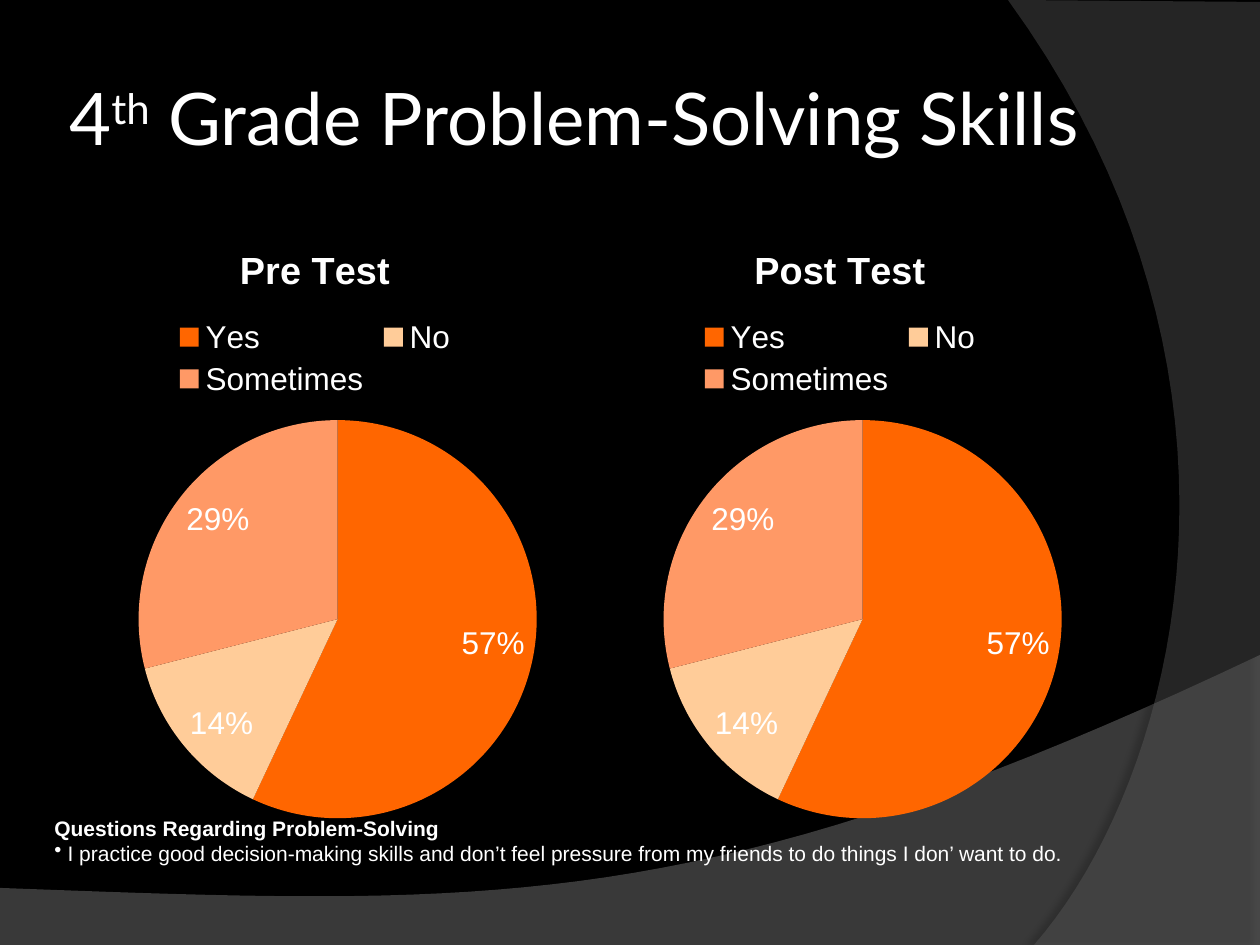
"""Build the slide comparing pre and post test problem-solving answers."""
from lxml import etree
from pptx import Presentation, util as u
from pptx.chart import data as cd
from pptx.dml import color as dc
from pptx.enum import chart as ce, text as te
from pptx.oxml import ns

THEME = {
    "back": "000000", "ink": "FFFFFF", "shade": "000000",
    "slices": ["FF6600", "FFCC99", "FF9966"],
    "body": "Arial", "head": "Lato",
    "title": 41.4, "name": 21.6, "chart": 18, "note": 12,
}
TITLE = [("4", 0), ("th", 30), (" Grade Problem-Solving Skills", 0)]
CATS = ["Yes", "No", "Sometimes"]
TESTS = {"Pre Test": [57, 14, 29], "Post Test": [57, 14, 29]}
NOTES = [
    ("Questions Regarding Problem-Solving", True),
    (" I practice good decision-making skills and don’t feel pressure "
     "from my friends to do things I don’ want to do.", False),
]
WAVES = [
    {"start": (1260, 655), "curve": [(704, 919), (493, 906), (0, 888)],
     "rest": [(0, 946), (1260, 946)], "fill": "7F7F7F", "alpha": 45,
     "shadow": (35, 4, 3.5, 270)},
    {"start": (1034, 945), "curve": [(1178, 780), (1283, 378), (1008, 0)],
     "rest": [(1260, 2), (1260, 945)], "fill": "5E5E5E", "alpha": 40,
     "shadow": (45, 4, 4, 180)},
]
TITLE_BOX = (63, 38, 1029, 158)
NOTE_BOX = (42, 809, 1081, 89)
CHART_BOX = (63, 220, 504, 624)
CHART_STEP = 525
PIE = {"x": 0.15, "y": 0.32, "w": 0.79, "h": 0.64}
SCALE = 914400 / 126
STEPS = 40


def emu(*nums):
    return [round(n * SCALE) for n in nums]


def rgb(code):
    return dc.RGBColor.from_string(code)


def sub(node, tag, **attrs):
    child = etree.SubElement(node, ns.qn(tag))
    for key, val in attrs.items():
        child.set(key, str(val))
    return child


def style(font, size, face=THEME["body"], bold=False):
    font.size, font.name, font.bold = u.Pt(size), face, bold
    font.color.rgb = rgb(THEME["ink"])


def write(para, text, size, face=THEME["body"], bold=False, base=0):
    run = para.add_run()
    run.text = text
    style(run.font, size, face, bold)
    if base:
        run._r.get_or_add_rPr().set("baseline", str(base * 1000))


def bend(start, curve):
    pts = [start, *curve]
    for i in range(1, STEPS + 1):
        t = i / STEPS
        mix = ((1 - t) ** 3, 3 * t * (1 - t) ** 2, 3 * t * t * (1 - t), t ** 3)
        yield tuple(sum(m * p[k] for m, p in zip(mix, pts)) for k in (0, 1))


def wave(slide, start, curve, rest, fill, alpha, shadow):
    pen = slide.shapes.build_freeform(*emu(*start))
    pen.add_line_segments([emu(*p) for p in [*bend(start, curve), *rest]])
    shape = pen.convert_to_shape()
    shape.line.fill.background()
    shape.fill.solid()
    shape.fill.fore_color.rgb = rgb(fill)
    clr = shape._element.spPr.find(".//" + ns.qn("a:srgbClr"))
    sub(clr, "a:alpha", val=alpha * 1000)
    shape.shadow.inherit = False
    dark, blur, dist, turn = shadow
    fx = shape._element.spPr.find(ns.qn("a:effectLst"))
    cast = sub(fx, "a:outerShdw", blurRad=u.Pt(blur), dist=u.Pt(dist),
               dir=turn * 60000, rotWithShape=0)
    clr = sub(cast, "a:srgbClr", val=THEME["shade"])
    sub(clr, "a:alpha", val=dark * 1000)


def pie(slide, name, vals, box):
    data = cd.CategoryChartData()
    data.categories = CATS
    data.add_series(name, vals)
    chart = slide.shapes.add_chart(
        ce.XL_CHART_TYPE.PIE, *emu(*box), data).chart
    style(chart.font, THEME["chart"])
    chart.has_title = True
    head = chart.chart_title.text_frame.paragraphs[0]
    write(head, name, THEME["name"], bold=True)
    chart.has_legend = True
    chart.legend.position = ce.XL_LEGEND_POSITION.TOP
    chart.legend.include_in_layout = False
    style(chart.legend.font, THEME["chart"])
    plot = chart.plots[0]
    plot.vary_by_categories = True
    for i, code in enumerate(THEME["slices"]):
        fill = plot.series[0].points[i].format.fill
        fill.solid()
        fill.fore_color.rgb = rgb(code)
    plot.has_data_labels = True
    tags = plot.data_labels
    tags.show_percentage, tags.show_value = True, False
    tags.number_format, tags.number_format_is_linked = "0%", False
    tags.position = ce.XL_LABEL_POSITION.INSIDE_END
    style(tags.font, THEME["chart"])
    area = chart._chartSpace.chart.plotArea
    for old in area.findall(ns.qn("c:layout")):
        area.remove(old)
    frame = sub(area, "c:layout")
    area.insert(0, frame)
    lay = sub(frame, "c:manualLayout")
    sub(lay, "c:layoutTarget", val="inner")
    for key in "xy":
        sub(lay, f"c:{key}Mode", val="edge")
    for key, val in PIE.items():
        sub(lay, f"c:{key}", val=val)


def main():
    deck = Presentation()
    deck.slide_width, deck.slide_height = u.Inches(10), u.Inches(7.5)
    slide = deck.slides.add_slide(deck.slide_layouts[5])
    slide.background.fill.solid()
    slide.background.fill.fore_color.rgb = rgb(THEME["back"])
    for part in WAVES:
        wave(slide, **part)

    title = slide.shapes.title
    slide.shapes._spTree.append(title._element)
    title.left, title.top, title.width, title.height = emu(*TITLE_BOX)
    frame = title.text_frame
    frame.vertical_anchor = te.MSO_ANCHOR.MIDDLE
    frame.margin_left = frame.margin_right = u.Inches(0.05)
    para = frame.paragraphs[0]
    para.alignment = te.PP_ALIGN.LEFT
    for text, base in TITLE:
        write(para, text, THEME["title"], THEME["head"], base=base)

    left, *rest = CHART_BOX
    for i, (name, vals) in enumerate(TESTS.items()):
        pie(slide, name, vals, (left + i * CHART_STEP, *rest))

    frame = slide.shapes.add_textbox(*emu(*NOTE_BOX)).text_frame
    frame.word_wrap = True
    for i, (text, bold) in enumerate(NOTES):
        para = frame.add_paragraph() if i else frame.paragraphs[0]
        write(para, text, THEME["note"], bold=bold)
        if not bold:
            sub(para._p.get_or_add_pPr(), "a:buChar", char="•")
    deck.save("out.pptx")


if __name__ == "__main__":
    main()
